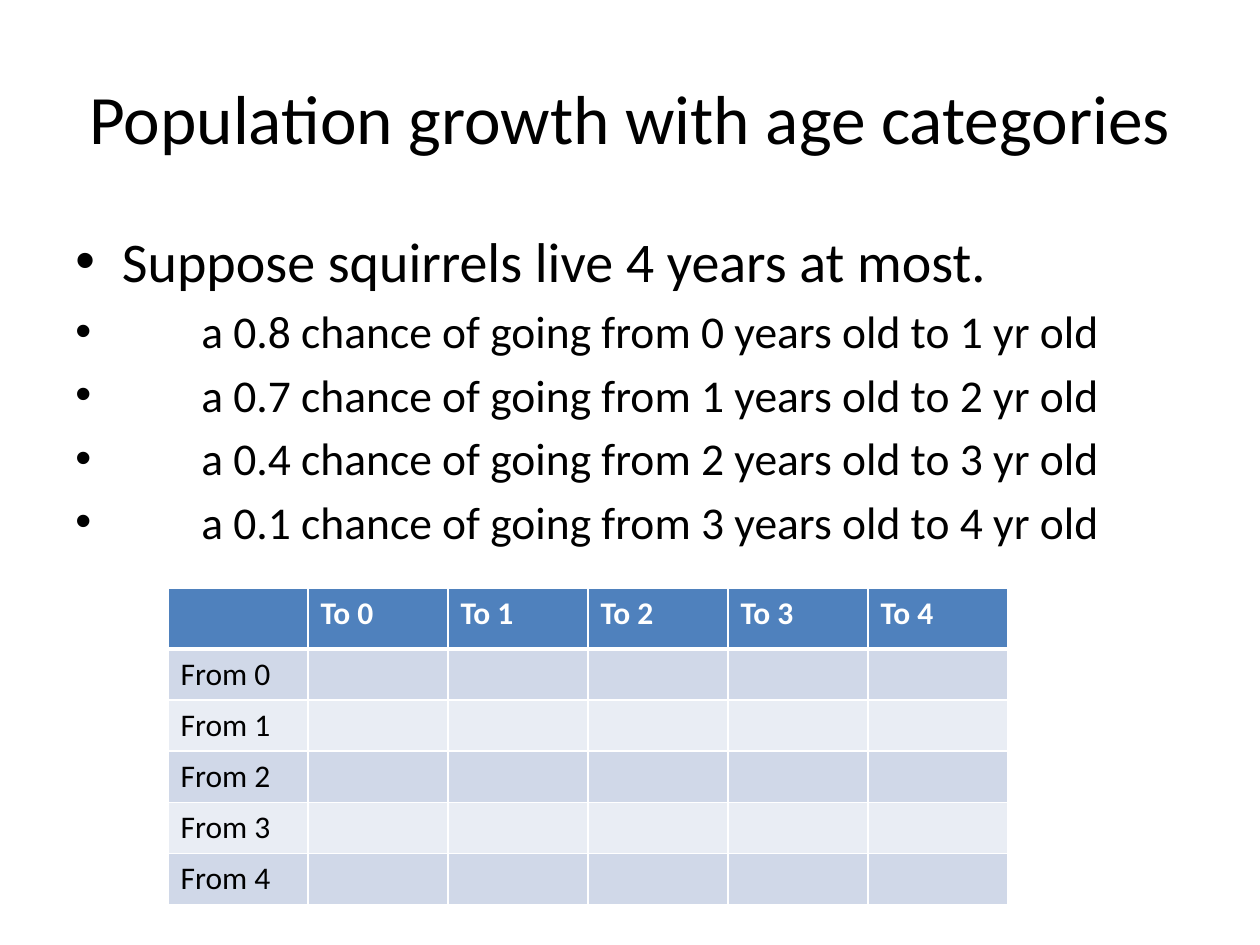
from lxml import etree
from pptx import Presentation
from pptx import util as u
from pptx.dml.color import RGBColor
from pptx.enum import text
from pptx.oxml import ns

FONT = "Calibri"
BLACK = RGBColor(0x00, 0x00, 0x00)
WHITE = RGBColor(0xFF, 0xFF, 0xFF)
HEADER_BLUE = RGBColor(0x4F, 0x81, 0xBD)
BANDS = [RGBColor(0xD0, 0xD8, 0xE8), RGBColor(0xE9, 0xED, 0xF4)]

WIDTH, HEIGHT = u.Inches(10), u.Inches(7.5)
TITLE_BOX = (0.05, 0.04, 0.9, 1 / 6)
BODY_BOX = (0.05, 0.7 / 3, 0.9, 0.66)
TABLE_BOX = (0.4 / 3, 5.6 / 9, 2 / 3, 0.335)
HEADER_SHARE = 0.193
INDENT = u.Inches(0.37)
TAB_WIDTH = u.Inches(1)
AGES = range(5)
SURVIVAL = [0.8, 0.7, 0.4, 0.1]


def place(shares):
    return [round(share * side) for share, side in zip(shares, (WIDTH, HEIGHT) * 2)]


def style(para, size, color=BLACK, bold=False):
    for span in para.runs:
        font = span.font
        font.name, font.size, font.bold = FONT, u.Pt(size), bold
        font.color.rgb = color


def add_bullet(para):
    props = para._p.get_or_add_pPr()
    props.set("marL", str(INDENT))
    props.set("indent", str(-INDENT))
    props.set("defTabSz", str(TAB_WIDTH))
    etree.SubElement(props, ns.qn("a:buFont"), typeface="Arial")
    etree.SubElement(props, ns.qn("a:buChar"), char="•")


def add_borders(cell, top, bottom):
    props = cell._tc.get_or_add_tcPr()
    for side, points in (("L", 1), ("R", 1), ("T", top), ("B", bottom)):
        line = etree.SubElement(props, ns.qn(f"a:ln{side}"), w=str(u.Pt(points)))
        fill = etree.SubElement(line, ns.qn("a:solidFill"))
        etree.SubElement(fill, ns.qn("a:srgbClr"), val=str(WHITE))


def add_title(page, shares):
    frame = page.shapes.add_textbox(*place(shares)).text_frame
    frame.word_wrap = True
    frame.vertical_anchor = text.MSO_ANCHOR.MIDDLE
    frame.text = "Population growth with age categories"
    para = frame.paragraphs[0]
    para.alignment = text.PP_ALIGN.CENTER
    style(para, 39.6)


def add_body(page, shares):
    frame = page.shapes.add_textbox(*place(shares)).text_frame
    frame.word_wrap = True
    lines = ["Suppose squirrels live 4 years at most."]
    lines += [f"\ta {chance} chance of going from {age} years old to {age + 1} yr old"
              for age, chance in enumerate(SURVIVAL)]
    frame.text = "\n".join(lines)
    for index, para in enumerate(frame.paragraphs):
        size = 26 if index else 32
        para.space_before = u.Pt(size * 0.2)
        add_bullet(para)
        style(para, size)


def add_transition_table(page, shares):
    left, top, width, height = place(shares)
    count = len(AGES) + 1
    table = page.shapes.add_table(count, count, left, top, width, height).table
    header_height = round(height * HEADER_SHARE)
    for column in table.columns:
        column.width = width // count
    for index, row in enumerate(table.rows):
        row.height = (height - header_height) // len(AGES) if index else header_height
        for cell in row.cells:
            add_borders(cell, 3 if index == 1 else 1, 1 if index else 3)
            cell.fill.solid()
            cell.fill.fore_color.rgb = BANDS[(index - 1) % 2] if index else HEADER_BLUE
    for age in AGES:
        header, label = table.cell(0, age + 1), table.cell(age + 1, 0)
        header.text_frame.text = f"To {age}"
        style(header.text_frame.paragraphs[0], 18, WHITE, True)
        label.text_frame.text = f"From {age}"
        style(label.text_frame.paragraphs[0], 18)


def main():
    deck = Presentation()
    deck.slide_width, deck.slide_height = WIDTH, HEIGHT
    page = deck.slides.add_slide(deck.slide_layouts[6])
    add_title(page, TITLE_BOX)
    add_body(page, BODY_BOX)
    add_transition_table(page, TABLE_BOX)
    deck.save("out.pptx")


if __name__ == "__main__":
    main()
